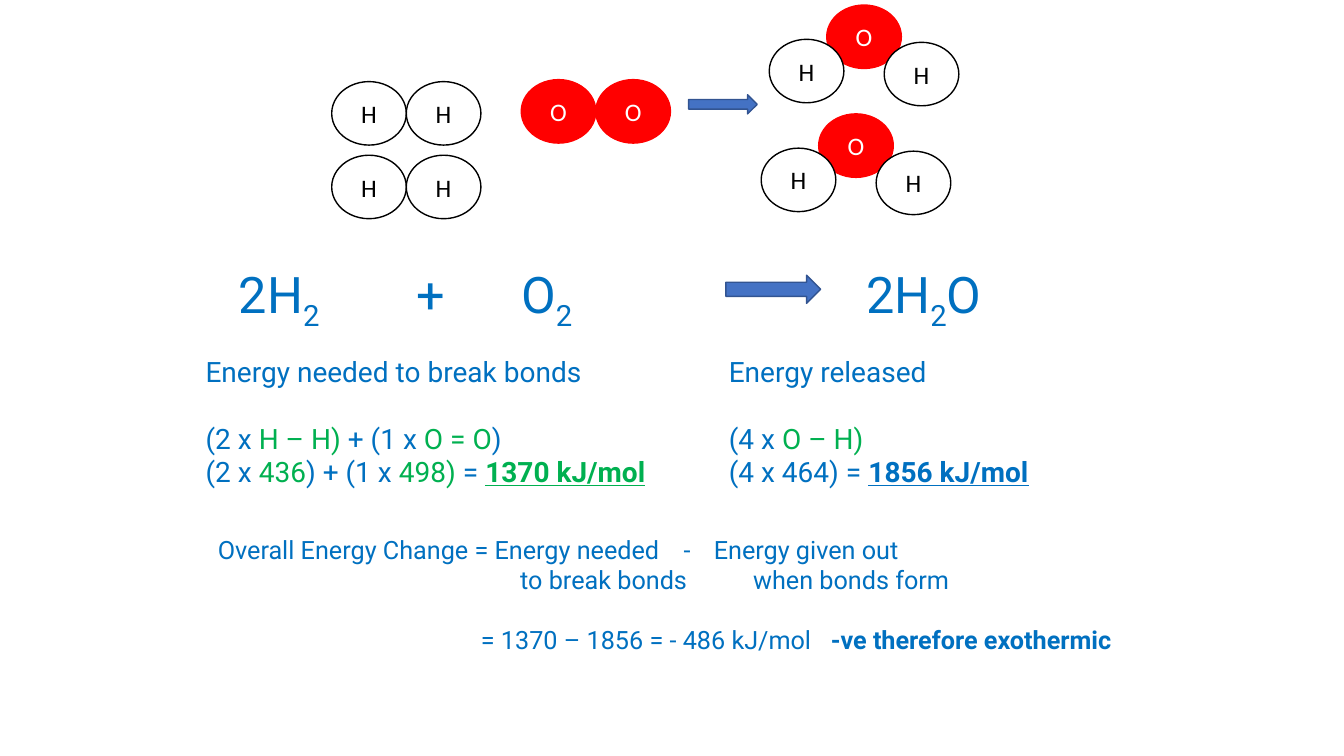
from dataclasses import dataclass, field
from typing import Any

from lxml.etree import SubElement
from pptx import Presentation
from pptx.dml.color import RGBColor
from pptx.enum.shapes import MSO_SHAPE as Shape
from pptx.enum.text import MSO_ANCHOR as Anchor, MSO_AUTO_SIZE as Fit, PP_ALIGN as Align
from pptx.oxml.ns import qn
from pptx.util import Pt

PX = 9144  # one px is a hundredth of an inch


def emu(*px: int) -> list[int]:
    return [n * PX for n in px]


@dataclass(frozen=True)
class Theme:
    blue: str = "0070C0"
    green: str = "00B050"
    red: str = "FF0000"
    white: str = "FFFFFF"
    black: str = "000000"
    arrow: str = "4472C4"
    edge: str = "325491"
    font: str = "Roboto"
    label: str = "Calibri"
    large: int = 36
    mid: int = 20
    small: int = 18


T = Theme()


@dataclass(frozen=True)
class Atom:
    text: str
    x: int
    y: int


@dataclass(frozen=True)
class Run:
    text: str
    tone: str = T.blue
    look: dict[str, Any] = field(default_factory=dict)
    sub: bool = False


@dataclass(frozen=True)
class Line:
    runs: list[Run]
    stops: tuple[int, ...] = ()
    look: dict[str, Any] = field(default_factory=dict)


@dataclass(frozen=True)
class Block:
    box: tuple[int, int, int, int]
    size: int
    lines: list[Line]
    inset: int = 10
    fit: Fit = Fit.SHAPE_TO_FIT_TEXT


def style(item: Any, look: dict[str, Any]) -> None:
    for name, value in look.items():
        setattr(item, name, value)


def paint(shape: Any, fill: str, edge: str) -> None:
    shape.shadow.inherit = False
    shape.fill.solid()
    shape.fill.fore_color.rgb = RGBColor.from_string(fill)
    shape.line.color.rgb = RGBColor.from_string(edge)
    shape.line.width = Pt(1)


def write(para: Any, run: Run, font: str, size: int) -> None:
    part = para.add_run()
    part.text = run.text
    style(part.font, {"name": font, "size": Pt(size), **run.look})
    part.font.color.rgb = RGBColor.from_string(run.tone)
    if run.sub:
        part.font._element.set("baseline", "-25000")


def draw_atom(shapes: Any, atom: Atom) -> None:
    fill, edge, tone = ATOMS[atom.text]
    ball = shapes.add_shape(Shape.OVAL, *emu(atom.x, atom.y, 74, 63))
    paint(ball, fill, edge)
    ball.text_frame.vertical_anchor = Anchor.MIDDLE
    para = ball.text_frame.paragraphs[0]
    para.alignment = Align.CENTER
    write(para, Run(atom.text, tone), T.label, T.small)


def draw_arrow(shapes: Any, box: tuple[int, int, int, int]) -> None:
    paint(shapes.add_shape(Shape.RIGHT_ARROW, *emu(*box)), T.arrow, T.edge)


def draw_block(shapes: Any, block: Block) -> None:
    frame = shapes.add_textbox(*emu(*block.box)).text_frame
    style(frame, {"word_wrap": True, "auto_size": block.fit,
                  "margin_left": block.inset * PX})
    for i, line in enumerate(block.lines):
        para = frame.add_paragraph() if i else frame.paragraphs[0]
        style(para, line.look)
        if line.stops:
            tabs = SubElement(para._p.get_or_add_pPr(), qn("a:tabLst"))
            for stop in line.stops:
                SubElement(tabs, qn("a:tab"), pos=str(stop * PX), algn="l")
        for run in line.runs:
            write(para, run, T.font, block.size)


def water(x: int, y: int) -> list[Atom]:
    return [Atom("O", x, y), Atom("H", x + 57, y + 37), Atom("H", x - 57, y + 34)]


# Fill, outline and letter colour of each element
ATOMS = {"O": (T.red, T.red, T.white), "H": (T.white, T.black, T.black)}

MODEL = [
    *(Atom("H", x, y) for y in (81, 154) for x in (329, 403)),
    *(Atom("O", x, 79) for x in (517, 591)),
    *water(820, 5),
    *water(812, 113),
]

STRONG = {"bold": True, "underline": True}
GAP = {"space_before": Pt(23.5)}

EQUATION = Block((215, 257, 900, 102), T.large, [
    Line([Run("2H"), Run("2", sub=True), Run("\t+\tO"), Run("2", sub=True),
          Run("\t2H"), Run("2", sub=True), Run("O")],
         (176, 280, 622), {"line_spacing": 0.9, "space_before": Pt(10)}),
], 22, Fit.NONE)

NEEDED = Block((194, 347, 489, 145), T.mid, [
    Line([Run("Energy needed to break bonds")]),
    Line([Run("(2 x "), Run("H – H) ", T.green), Run("+ (1 x "),
          Run("O = O", T.green), Run(")")], look=GAP),
    Line([Run("(2 x "), Run("436", T.green), Run(") + (1 x "), Run("498) ", T.green),
          Run("= "), Run("1370 kJ/mol", T.green, STRONG)]),
])

RELEASED = Block((713, 347, 439, 145), T.mid, [
    Line([Run("Energy released")]),
    Line([Run("(4 x "), Run("O – H)", T.green)], look=GAP),
    Line([Run("(4 x 464) = "), Run("1856 kJ/mol", look=STRONG)]),
])

OVERALL = Block((194, 525, 937, 131), T.small, [
    Line([Run("Overall Energy Change = Energy needed\t-\tEnergy given out")], (462, 492)),
    Line([Run("\tto break bonds\twhen bonds form")], (300, 531)),
    Line([Run("\t= 1370 – 1856 = - 486 kJ/mol\t"),
          Run("-ve therefore exothermic", look={"bold": True})],
         (261, 608), {"space_before": Pt(21)}),
], 22)


def main() -> None:
    deck = Presentation()
    deck.slide_width, deck.slide_height = emu(1333, 750)
    shapes = deck.slides.add_slide(deck.slide_layouts[6]).shapes

    # Equation and its arrow
    draw_block(shapes, EQUATION)
    draw_arrow(shapes, (720, 273, 94, 28))

    # Particle model
    group = shapes.add_group_shape().shapes
    draw_arrow(group, (683, 94, 68, 19))
    for atom in MODEL:
        draw_atom(group, atom)

    # Energy sums
    for block in (NEEDED, RELEASED, OVERALL):
        draw_block(shapes, block)

    deck.save("out.pptx")


if __name__ == "__main__":
    main()
